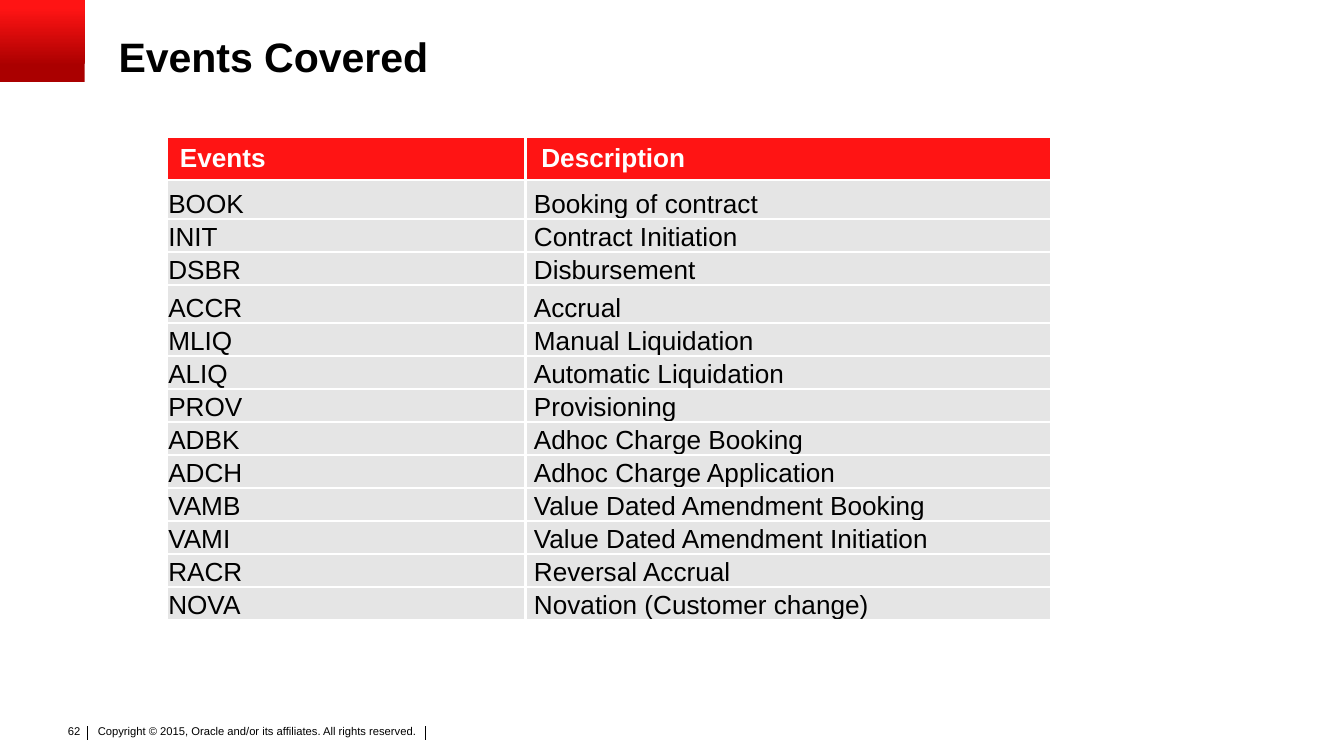
"""Build the slide that lists the events covered and their descriptions."""
import dataclasses

import lxml.etree
import pptx
import pptx.dml.color
import pptx.enum.shapes
import pptx.enum.text
import pptx.oxml
import pptx.oxml.ns
import pptx.util

Cm = pptx.util.Cm
Pt = pptx.util.Pt
Anchor = pptx.enum.text.MSO_ANCHOR
Align = pptx.enum.text.PP_ALIGN


@dataclasses.dataclass(frozen=True)
class Theme:
    font: str = "Arial"
    black: str = "000000"
    white: str = "FFFFFF"
    red: str = "FF1414"
    dark_red: str = "AA0000"
    grey: str = "E5E5E5"
    title_size: float = 22
    table_size: float = 14
    footer_size: float = 6
    border_width: float = 1.5


THEME = Theme()

HEADER = ("Events", "Description")
EVENTS = [
    ("BOOK", "Booking of contract"),
    ("INIT", "Contract Initiation"),
    ("DSBR", "Disbursement"),
    ("ACCR", "Accrual"),
    ("MLIQ", "Manual Liquidation"),
    ("ALIQ", "Automatic Liquidation"),
    ("PROV", "Provisioning"),
    ("ADBK", "Adhoc Charge Booking"),
    ("ADCH", "Adhoc Charge Application"),
    ("VAMB", "Value Dated Amendment Booking"),
    ("VAMI", "Value Dated Amendment Initiation"),
    ("RACR", "Reversal Accrual"),
    ("NOVA", "Novation (Customer change)"),
]
COLUMN_WIDTHS = (6.78, 9.93)
ROW_HEIGHT = 0.6
SPECIAL_HEIGHTS = {"Events": 0.81, "BOOK": 0.74, "INIT": 0.58, "ACCR": 0.71, "MLIQ": 0.58}
HEADER_MARGINS = ((0.25, 0.1, 0.25, 0.1), (0.3, 0.1, 0.25, 0.1))
EVENT_MARGINS = ((0.03, 0.03, 0.03, 0), (0.16, 0.03, 0.03, 0))


def rgb(value):
    """Turn a hex string into a colour."""
    return pptx.dml.color.RGBColor.from_string(value)


def write_text(frame, text, *, size, color=THEME.black, bold=False,
               align=Align.LEFT, line_spacing=1.0):
    """Put one formatted paragraph into a text frame."""
    paragraph = frame.paragraphs[0]
    paragraph.text = text
    paragraph.alignment = align
    paragraph.line_spacing = line_spacing
    paragraph.space_before = Pt(0)
    paragraph.font.name = THEME.font
    paragraph.font.size = Pt(size)
    paragraph.font.bold = bold
    paragraph.font.color.rgb = rgb(color)


def set_margins(target, margins):
    """Set the left, top, right and bottom margins of a frame or cell."""
    for side, value in zip(("left", "top", "right", "bottom"), margins):
        setattr(target, f"margin_{side}", Cm(value))


def add_title(slide, text):
    """Place and format the title placeholder."""
    title = slide.shapes.title
    title.left, title.top, title.width, title.height = Cm(2.24), Cm(0.69), Cm(22.86), Cm(1.12)
    frame = title.text_frame
    set_margins(frame, (0, 0, 0, 0))
    frame.vertical_anchor = Anchor.TOP
    frame.auto_size = pptx.enum.text.MSO_AUTO_SIZE.NONE
    write_text(frame, text, size=THEME.title_size, bold=True, line_spacing=0.9)


def add_corner_block(slide):
    """Add the red gradient block in the top left corner."""
    block = slide.shapes.add_shape(
        pptx.enum.shapes.MSO_SHAPE.RECTANGLE, Cm(0), Cm(0), Cm(1.6), Cm(1.55))
    block.shadow.inherit = False
    block.line.fill.background()
    block.fill.gradient()
    block.fill.gradient_angle = 90
    stops = ((0.2, THEME.dark_red), (0.9, THEME.red))
    for stop, (position, color) in zip(block.fill.gradient_stops, stops):
        stop.position = position
        stop.color.rgb = rgb(color)


def add_footer_text(slide, text, box, margins, **text_format):
    """Add a small text box in the footer."""
    shape = slide.shapes.add_textbox(*(Cm(value) for value in box))
    frame = shape.text_frame
    frame.word_wrap = True
    set_margins(frame, margins)
    write_text(frame, text, size=THEME.footer_size, **text_format)


def add_footer_divider(slide, left):
    """Add a short vertical line in the footer."""
    divider = slide.shapes.add_connector(
        pptx.enum.shapes.MSO_CONNECTOR.STRAIGHT, Cm(left), Cm(13.72), Cm(left), Cm(13.97))
    divider.line.color.rgb = rgb(THEME.black)
    divider.line.width = Pt(0.5)
    lxml.etree.SubElement(divider._element.spPr, pptx.oxml.ns.qn("a:effectLst"))


def add_cell_borders(cell):
    """Draw white borders on the four sides of a cell."""
    properties = cell._tc.get_or_add_tcPr()
    for side in ("lnL", "lnR", "lnT", "lnB"):
        properties.append(pptx.oxml.parse_xml(
            f'<a:{side} {pptx.oxml.ns.nsdecls("a")} w="{Pt(THEME.border_width)}">'
            f'<a:solidFill><a:srgbClr val="{THEME.white}"/></a:solidFill></a:{side}>'))


def fill_cell(cell, text, margins, *, fill, anchor, **text_format):
    """Format one table cell and write its text."""
    add_cell_borders(cell)
    cell.fill.solid()
    cell.fill.fore_color.rgb = rgb(fill)
    cell.vertical_anchor = anchor
    set_margins(cell, margins)
    write_text(cell.text_frame, text, size=THEME.table_size, **text_format)


def add_event_table(slide):
    """Add the table of events and descriptions."""
    rows = [HEADER, *EVENTS]
    heights = [SPECIAL_HEIGHTS.get(name, ROW_HEIGHT) for name, _ in rows]
    table = slide.shapes.add_table(
        len(rows), len(HEADER), Cm(3.15), Cm(2.59),
        Cm(sum(COLUMN_WIDTHS)), Cm(sum(heights))).table
    for column, width in zip(table.columns, COLUMN_WIDTHS):
        column.width = Cm(width)
    for index, (texts, height) in enumerate(zip(rows, heights)):
        table.rows[index].height = Cm(height)
        if index == 0:
            margins = HEADER_MARGINS
            style = dict(fill=THEME.red, anchor=Anchor.MIDDLE, color=THEME.white, bold=True)
        else:
            margins = EVENT_MARGINS
            style = dict(fill=THEME.grey, anchor=Anchor.BOTTOM)
        for column, text in enumerate(texts):
            fill_cell(table.cell(index, column), text, margins[column], **style)


def main():
    """Build and save the presentation."""
    presentation = pptx.Presentation()
    presentation.slide_width, presentation.slide_height = Cm(25.4), Cm(14.28)
    slide = presentation.slides.add_slide(presentation.slide_layouts[5])
    add_footer_text(
        slide, "Copyright © 2015, Oracle and/or its affiliates. All rights reserved.",
        (1.75, 13.64, 6.96, 0.61), (0.1, 0.05, 0.1, 0.05))
    for left in (1.66, 8.04):
        add_footer_divider(slide, left)
    add_footer_text(slide, "62", (0.99, 13.56, 0.78, 0.51), (0, 0.13, 0.25, 0.13),
                    align=Align.RIGHT)
    add_corner_block(slide)
    add_title(slide, "Events Covered")
    add_event_table(slide)
    presentation.save("out.pptx")


if __name__ == "__main__":
    main()
